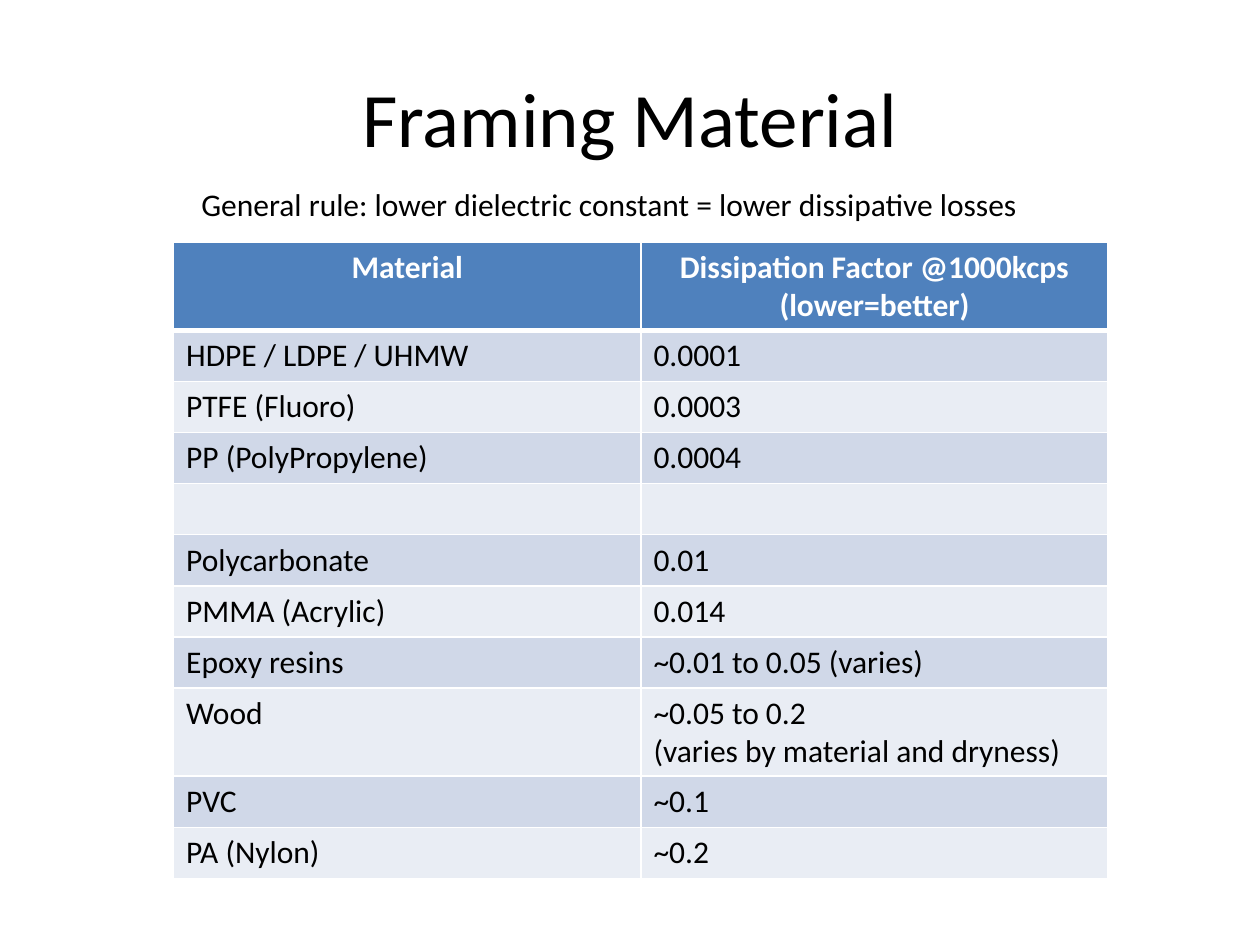
from lxml.etree import SubElement
from pptx import Presentation
from pptx.dml.color import RGBColor
from pptx.enum.text import MSO_ANCHOR as Anchor, PP_ALIGN as Align
from pptx.oxml.ns import qn
from pptx.util import Cm, Pt

FONT = "Calibri"
BLACK, WHITE = "000000", "FFFFFF"
HEADER_FILL = "4F81BD"
BAND_FILLS = ("E9EDF4", "D0D8E8")
ROWS = [
    ("Material", "Dissipation Factor @1000kcps\n(lower=better)"),
    ("HDPE / LDPE / UHMW", "0.0001"),
    ("PTFE (Fluoro)", "0.0003"),
    ("PP (PolyPropylene)", "0.0004"),
    ("", ""),
    ("Polycarbonate", "0.01"),
    ("PMMA (Acrylic)", "0.014"),
    ("Epoxy resins", "~0.01 to 0.05 (varies)"),
    ("Wood", "~0.05 to 0.2\n(varies by material and dryness)"),
    ("PVC", "~0.1"),
    ("PA (Nylon)", "~0.2"),
]


def rgb(value):
    return RGBColor.from_string(value)


def write(tf, text, size, color=BLACK, bold=False, align=Align.LEFT):
    tf.text = text
    for p in tf.paragraphs:
        p.alignment = align
        p.font.name = FONT
        p.font.size = Pt(size)
        p.font.bold = bold
        p.font.color.rgb = rgb(color)


def add_text(slide, box, text, size, align=Align.LEFT, anchor=Anchor.TOP):
    tf = slide.shapes.add_textbox(*map(Cm, box)).text_frame
    tf.word_wrap = True
    tf.vertical_anchor = anchor
    write(tf, text, size, align=align)


def set_borders(cell, color, bottom):
    tc_pr = cell._tc.get_or_add_tcPr()
    for side, width in (("L", 1), ("R", 1), ("T", 1), ("B", bottom)):
        ln = SubElement(tc_pr, qn(f"a:ln{side}"), w=str(Pt(width)))
        SubElement(SubElement(ln, qn("a:solidFill")), qn("a:srgbClr"), val=color)


def add_materials_table(slide, left, top, col_width, row_height):
    table = slide.shapes.add_table(
        len(ROWS), 2, Cm(left), Cm(top), Cm(2 * col_width), Cm(row_height * len(ROWS))
    ).table
    for i, row in enumerate(ROWS):
        header = i == 0
        for j, text in enumerate(row):
            cell = table.cell(i, j)
            set_borders(cell, WHITE, 3 if header else 1)
            cell.fill.solid()
            cell.fill.fore_color.rgb = rgb(HEADER_FILL if header else BAND_FILLS[i % 2])
            write(
                cell.text_frame, text, 18,
                color=WHITE if header else BLACK,
                bold=header,
                align=Align.CENTER if header else Align.LEFT,
            )


def main():
    prs = Presentation()
    prs.slide_width, prs.slide_height = Cm(25.4), Cm(19.05)
    slide = prs.slides.add_slide(prs.slide_layouts[6])
    add_text(slide, (1.27, 0.76, 22.86, 3.18), "Framing Material", 44,
             Align.CENTER, Anchor.MIDDLE)
    add_materials_table(slide, 3.5, 4.88, 9.42, 1.03)
    add_text(slide, (3.81, 3.61, 18.2, 1.02),
             "General rule: lower dielectric constant = lower dissipative losses", 18)
    prs.save("out.pptx")


if __name__ == "__main__":
    main()
